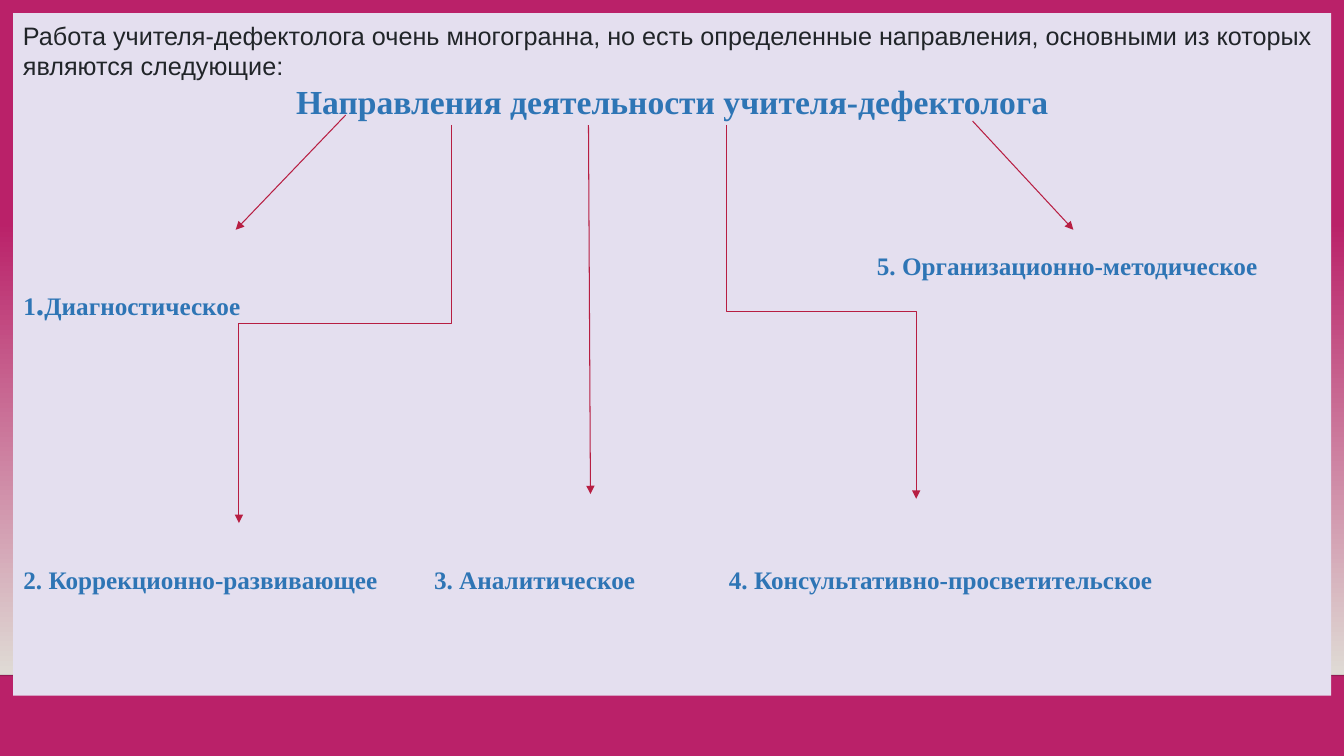
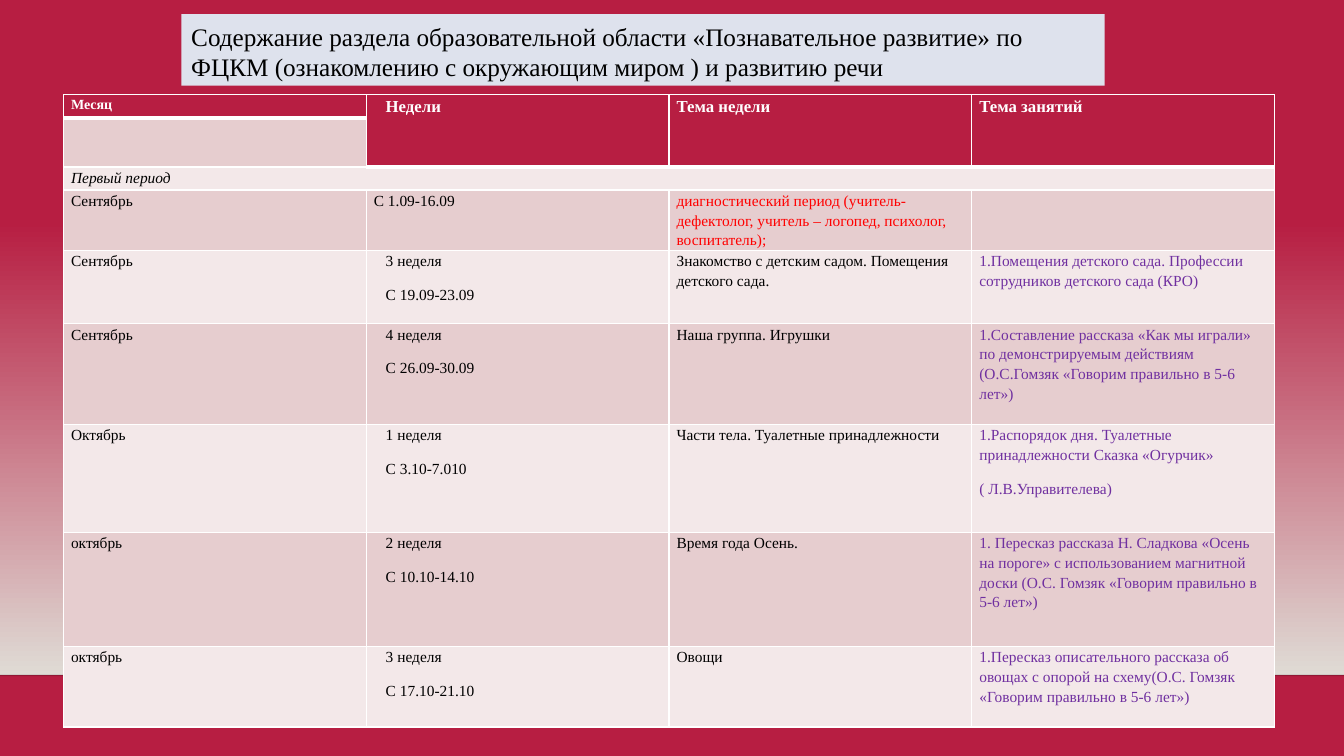
from lxml import etree
from pptx import Presentation, util as u
from pptx.dml.color import RGBColor
from pptx.enum import shapes, text
from pptx.oxml import ns

SERIF, SANS = "Times New Roman", "Arial"
BLUE, RED, WHITE, BLACK, VIOLET = "2E75B5", "B71E42", "FFFFFF", "000000", "7030A0"
ROSE, PALE = "E6CDCF", "F3E8E9"


def hue(code):
    return RGBColor.from_string(code)


def say(para, words, size, code, face=SERIF, bold=False, slant=False):
    run = para.add_run()
    run.text = words
    font = run.font
    font.name, font.size, font.bold, font.italic = face, u.Pt(size), bold, slant
    font.color.rgb = hue(code)


deck = Presentation()
deck.slide_width, deck.slide_height = u.Cm(33.87), u.Cm(19.05)

looks = [
    ("BA2169", "E4DFEF", (0.33, 0.33, 33.22, 17.2)),
    (RED, "DEE2ED", (4.57, 0.36, 23.27, 1.8)),
]
pages, panels = [], []
for back, light, place in looks:
    page = deck.slides.add_slide(deck.slide_layouts[6])
    page.background.fill.solid()
    page.background.fill.fore_color.rgb = hue(back)
    band = page.shapes.add_shape(
        shapes.MSO_SHAPE.RECTANGLE, 0, u.Cm(5.61), deck.slide_width, u.Cm(11.41))
    band.shadow.inherit = False
    band.line.fill.background()
    band.fill.gradient()
    band.fill.gradient_angle = 270
    for stop, code, spot in zip(band.fill.gradient_stops, (back, "DFDBD5"), (0, 1)):
        stop.color.rgb = hue(code)
        stop.position = spot
    edge = page.shapes.add_connector(
        shapes.MSO_CONNECTOR.STRAIGHT, 0, u.Cm(17.02), deck.slide_width, u.Cm(17.02))
    edge.line.width = u.Pt(1)
    edge.line.color.rgb = hue("000001")
    tone = edge.line._ln.find(".//" + ns.qn("a:srgbClr"))
    etree.SubElement(tone, ns.qn("a:alpha")).set("val", "20000")
    panel = page.shapes.add_shape(
        shapes.MSO_SHAPE.RECTANGLE, *[u.Cm(n) for n in place])
    panel.shadow.inherit = False
    panel.line.fill.background()
    panel.fill.solid()
    panel.fill.fore_color.rgb = hue(light)
    frame = panel.text_frame
    frame.word_wrap = True
    frame.margin_top = u.Cm(0.18)
    frame.vertical_anchor = text.MSO_ANCHOR.TOP
    frame.paragraphs[0].alignment = text.PP_ALIGN.LEFT
    pages.append(page)
    panels.append(frame)

chart, plan = pages
intro = panels[0].paragraphs[0]
say(intro, "Работа учителя-дефектолога очень многогранна, но есть определенные "
    "направления, основными из которых являются следующие:", 18, "212529", SANS)
head = panels[0].add_paragraph()
head.alignment = text.PP_ALIGN.CENTER
say(head, "Направления деятельности учителя-дефектолога", 24, BLUE, bold=True)

labels = [
    (0.59, 7.22, 8, [("1", 18), (".", 24), ("Диагностическое", 18)]),
    (0.59, 14.19, 10, [("2. Коррекционно-развивающее", 18)]),
    (10.94, 14.19, 7, [("3. Аналитическое", 18)]),
    (18.37, 14.19, 12, [("4. Консультативно-просветительское", 18)]),
    (22.1, 6.28, 11, [("5. Организационно-методическое", 18)]),
]
for left, top, width, parts in labels:
    box = chart.shapes.add_textbox(u.Cm(left), u.Cm(top), u.Cm(width), u.Cm(0.8))
    frame = box.text_frame
    frame.word_wrap = True
    frame.margin_left = frame.margin_right = frame.margin_top = frame.margin_bottom = 0
    frame.vertical_anchor = text.MSO_ANCHOR.MIDDLE
    for words, size in parts:
        say(frame.paragraphs[0], words, size, BLUE, bold=True)

arrows = [
    (8.71, 2.9, 5.94, 5.79, False),
    (14.83, 3.15, 14.88, 12.45, False),
    (24.51, 3.05, 27.05, 5.79, False),
    (18.31, 3.15, 23.09, 12.57, True),
    (11.38, 3.15, 6.02, 13.18, True),
]
for x, y, endx, endy, bent in arrows:
    kind = shapes.MSO_CONNECTOR.STRAIGHT
    ends = (x, y, endx, endy)
    if bent:
        kind = shapes.MSO_CONNECTOR.ELBOW
        midx, midy = (x + endx) / 2, (y + endy) / 2
        halfw, halfh = (endy - y) / 2, abs(endx - x) / 2
        ends = (midx - halfw, midy - halfh, midx + halfw, midy + halfh)
    arrow = chart.shapes.add_connector(kind, *[u.Cm(n) for n in ends])
    if bent:
        turn = arrow._element.spPr.find(ns.qn("a:xfrm"))
        turn.set("rot", "16200000" if endx > x else "5400000")
        if endx > x:
            turn.set("flipH", "1")
    arrow.line.width = u.Pt(0.75)
    arrow.line.color.rgb = hue(RED)
    etree.SubElement(arrow.line._ln, ns.qn("a:tailEnd")).set("type", "triangle")

for page in pages:
    for item in page.shapes:
        if item.shape_type == shapes.MSO_SHAPE_TYPE.LINE or hasattr(item, "begin_x"):
            etree.SubElement(item._element.spPr, ns.qn("a:effectLst"))

say(panels[1].paragraphs[0], "Содержание раздела образовательной области "
    "«Познавательное развитие» по ФЦКМ (ознакомлению с окружающим миром ) "
    "и развитию речи", 18, BLACK)

rows = [
    ("Месяц", "Недели", "Тема недели", "Тема занятий"),
    ("", "", "", ""),
    ("Первый период", "", "", ""),
    ("Сентябрь", "С 1.09-16.09",
     "диагностический период (учитель-дефектолог, учитель – логопед, психолог, воспитатель);", ""),
    ("Сентябрь", "3 неделя\nС 19.09-23.09",
     "Знакомство с детским садом. Помещения детского сада.",
     "1.Помещения детского сада. Профессии сотрудников детского сада (КРО)"),
    ("Сентябрь", "4 неделя\nС 26.09-30.09", "Наша группа. Игрушки",
     "1.Составление рассказа «Как мы играли» по демонстрируемым действиям "
     "(О.С.Гомзяк «Говорим правильно в 5-6 лет»)"),
    ("Октябрь", "1 неделя\nС 3.10-7.010", "Части тела. Туалетные принадлежности",
     "1.Распорядок дня. Туалетные принадлежности Сказка «Огурчик»\n( Л.В.Управителева)"),
    ("октябрь", "2 неделя\nС 10.10-14.10", "Время года Осень.",
     "1. Пересказ рассказа Н. Сладкова «Осень на пороге» с использованием "
     "магнитной доски (О.С. Гомзяк «Говорим правильно в 5-6 лет»)"),
    ("октябрь", "3 неделя\nС 17.10-21.10", "Овощи",
     "1.Пересказ описательного рассказа об овощах с опорой на схему"
     "(О.С. Гомзяк «Говорим правильно в 5-6 лет»)"),
]
highs = [0.58, 1.24, 0.58, 1.52, 1.85, 2.54, 2.72, 2.87, 2.03]
grid = plan.shapes.add_table(
    len(rows), 4, u.Cm(1.6), u.Cm(2.39), u.Cm(30.52), u.Cm(sum(highs))).table
for col in grid.columns:
    col.width = u.Cm(7.63)
for row, high in zip(grid.rows, highs):
    row.height = u.Cm(high)
for c in range(1, 4):
    grid.cell(0, c).merge(grid.cell(1, c))
grid.cell(2, 0).merge(grid.cell(2, 3))

for r, row in enumerate(rows):
    for c, words in enumerate(row):
        cell = grid.cell(r, c)
        top = r == 0 or (r == 1 and c > 0)
        cell.margin_left = cell.margin_right = u.Cm(0.19)
        cell.margin_top = cell.margin_bottom = 0
        for side in "LRTB" if r == 0 else "LRB":
            rule = etree.SubElement(cell._tc.get_or_add_tcPr(), ns.qn("a:ln" + side))
            rule.set("w", str(u.Pt(3 if top and side == "B" else 1)))
            fill = etree.SubElement(rule, ns.qn("a:solidFill"))
            etree.SubElement(fill, ns.qn("a:srgbClr")).set("val", WHITE)
        cell.fill.solid()
        cell.fill.fore_color.rgb = hue(RED if top else ROSE if r % 2 else PALE)
        if not words:
            continue
        size, code = 11, BLACK
        if top:
            size, code = 12 if c else 10, WHITE
        elif c == 3:
            code = VIOLET
        elif (r, c) == (3, 2):
            code = "FF0000"
        for n, line in enumerate(words.split("\n")):
            frame = cell.text_frame
            para = frame.add_paragraph() if n else frame.paragraphs[0]
            para.line_spacing = 1.15
            para.space_after = u.Pt(10)
            if c == 1 and r != 3:
                para._p.get_or_add_pPr().set("marL", str(u.Cm(0.3)))
            say(para, line, size, code, bold=top, slant=r == 2)

deck.save("out.pptx")
